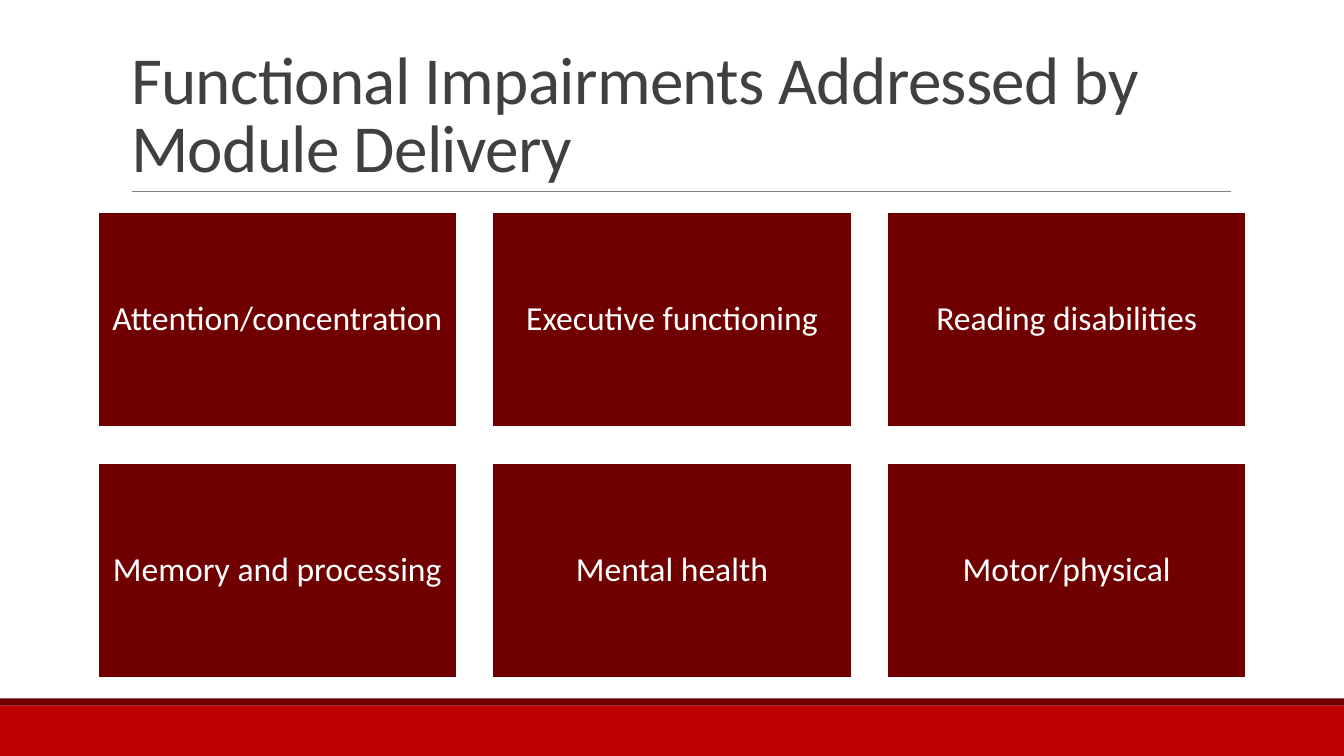
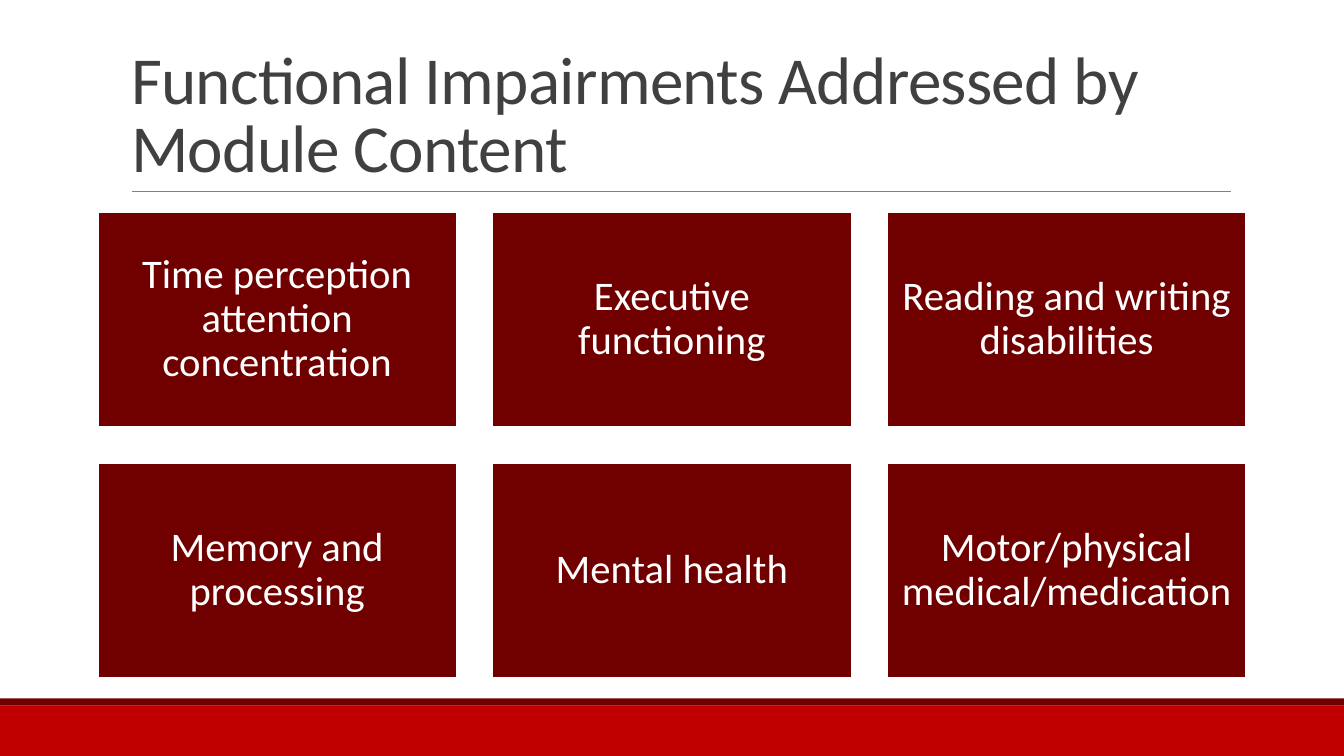
from lxml.etree import SubElement
from pptx import Presentation
from pptx.dml.color import RGBColor
from pptx.enum.shapes import MSO_CONNECTOR, MSO_SHAPE
from pptx.enum.text import MSO_ANCHOR, MSO_AUTO_SIZE, PP_ALIGN
from pptx.oxml.ns import qn
from pptx.util import Inches, Pt

SLIDES = [
    {
        "title": "Functional Impairments Addressed by Module Delivery",
        "size": 24,
        "inset": 0.1,
        "tiles": [
            "Attention/concentration",
            "Executive functioning",
            "Reading disabilities",
            "Memory and processing",
            "Mental health",
            "Motor/physical",
        ],
    },
    {
        "title": "Functional Impairments Addressed by Module Content",
        "size": 29,
        "inset": 0.12,
        "tiles": [
            "Time perception\vattention\vconcentration",
            "Executive functioning",
            "Reading and writing disabilities",
            "Memory and processing",
            "Mental health",
            "Motor/physical\vmedical/medication",
        ],
    },
]

FONT = "Calibri"
RED = RGBColor(0xC0, 0x00, 0x00)
DARK_RED = RGBColor(0x70, 0x00, 0x00)
GRAY = RGBColor(0x80, 0x80, 0x80)
TITLE_GRAY = RGBColor(0x40, 0x40, 0x40)
WHITE = RGBColor(0xFF, 0xFF, 0xFF)

SLIDE_WIDTH, SLIDE_HEIGHT = 13.33, 7.5
BANDS = [(7, 0.5, RED), (6.93, 0.07, DARK_RED)]
RULE_LEFT, RULE_RIGHT, RULE_TOP = 1.31, 12.21, 1.9
TITLE_BOX = (1.2, 0.31, 11, 1.59)

COLUMNS = 3
GRID_LEFT, GRID_RIGHT, GRID_TOP = 0.97, 12.36, 2.1
TILE_WIDTH, TILE_HEIGHT, ROW_GAP = 3.56, 2.14, 0.35
COLUMN_GAP = (GRID_RIGHT - GRID_LEFT - COLUMNS * TILE_WIDTH) / (COLUMNS - 1)


def add_rectangle(page, left, top, width, height, color):
    box = page.shapes.add_shape(
        MSO_SHAPE.RECTANGLE, Inches(left), Inches(top), Inches(width), Inches(height)
    )
    box.shadow.inherit = False
    box.fill.solid()
    box.fill.fore_color.rgb = color
    box.line.fill.background()
    return box


def format_text(frame, size, color, spacing, alignment):
    for para in frame.paragraphs:
        para.alignment = alignment
        para.line_spacing = spacing
        for span in para.runs:
            span.font.name = FONT
            span.font.size = Pt(size)
            span.font.color.rgb = color


def style_layout(layout, page):
    for placeholder in list(layout.placeholders)[1:]:
        placeholder.element.getparent().remove(placeholder.element)
    title = layout.placeholders[0]
    title.left, title.top, title.width, title.height = map(Inches, TITLE_BOX)
    title.text_frame.vertical_anchor = MSO_ANCHOR.BOTTOM
    title.text_frame.auto_size = MSO_AUTO_SIZE.NONE
    decor = [
        add_rectangle(page, 0, top, SLIDE_WIDTH, height, color)
        for top, height, color in BANDS
    ]
    rule = page.shapes.add_connector(
        MSO_CONNECTOR.STRAIGHT,
        Inches(RULE_LEFT), Inches(RULE_TOP), Inches(RULE_RIGHT), Inches(RULE_TOP),
    )
    rule.line.color.rgb = GRAY
    rule.line.width = Pt(0.5)
    SubElement(rule.element.spPr, qn("a:effectLst"))
    for shape in decor + [rule]:
        title.element.addprevious(shape.element)


def add_title(page, text):
    frame = page.shapes.title.text_frame
    frame.text = text
    format_text(frame, 48, TITLE_GRAY, 0.85, PP_ALIGN.LEFT)
    for span in frame.paragraphs[0].runs:
        span.font.element.set("spc", "-50") if hasattr(span.font, "element") else span.font._element.set("spc", "-50")


def add_tiles(page, tiles, size, inset):
    for index, text in enumerate(tiles):
        row, column = divmod(index, COLUMNS)
        left = GRID_LEFT + column * (TILE_WIDTH + COLUMN_GAP)
        top = GRID_TOP + row * (TILE_HEIGHT + ROW_GAP)
        tile = add_rectangle(page, left, top, TILE_WIDTH, TILE_HEIGHT, DARK_RED)
        tile.line.color.rgb = WHITE
        tile.line.width = Pt(1.25)
        frame = tile.text_frame
        frame.text = text
        frame.word_wrap = True
        frame.vertical_anchor = MSO_ANCHOR.MIDDLE
        frame.margin_left = frame.margin_right = Inches(inset)
        frame.margin_top = frame.margin_bottom = Inches(inset)
        format_text(frame, size, WHITE, 0.9, PP_ALIGN.CENTER)


def main():
    deck = Presentation()
    deck.slide_width = Inches(SLIDE_WIDTH)
    deck.slide_height = Inches(SLIDE_HEIGHT)
    layout = deck.slide_layouts.get_by_name("Title Only")
    pages = [deck.slides.add_slide(layout) for _ in SLIDES]
    style_layout(layout, pages[0])
    for page, content in zip(pages, SLIDES):
        add_title(page, content["title"])
        add_tiles(page, content["tiles"], content["size"], content["inset"])
    deck.save("out.pptx")


if __name__ == "__main__":
    main()
